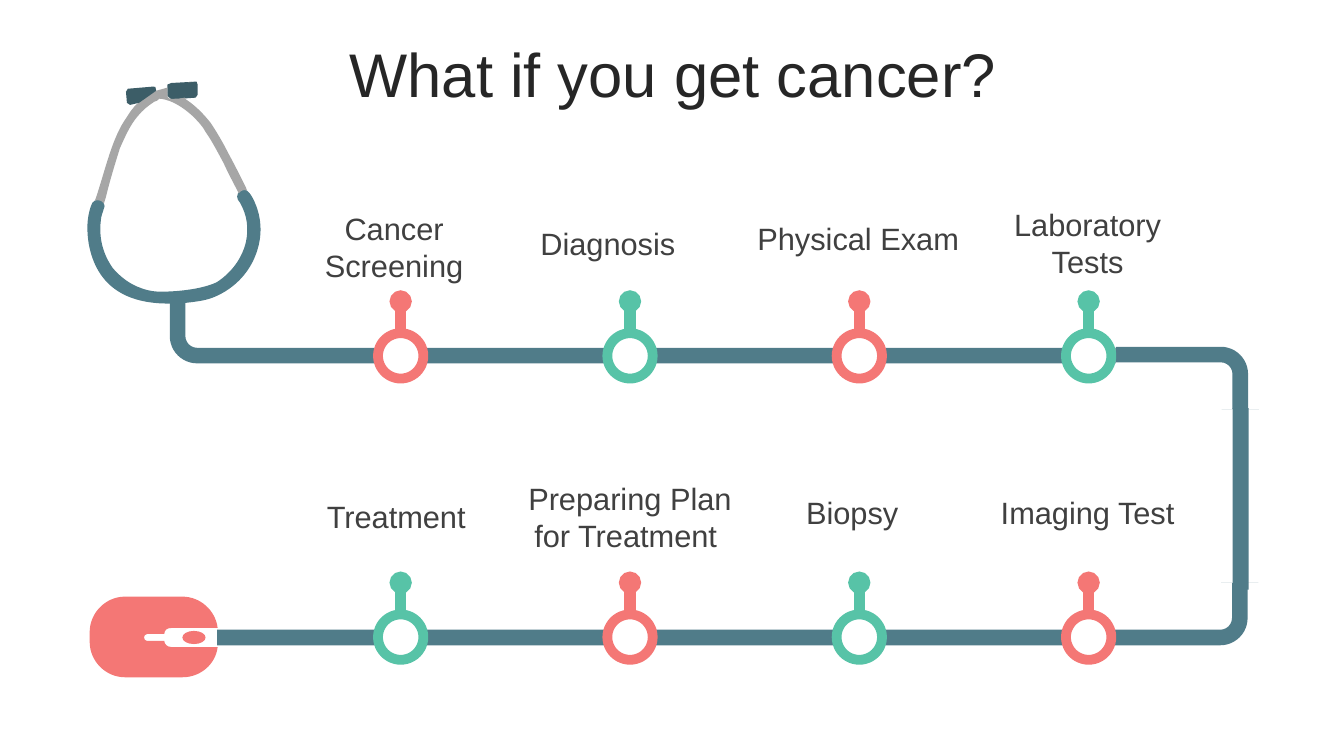
from dataclasses import dataclass

from lxml import etree
from pptx import Presentation
from pptx.dml.color import RGBColor
from pptx.enum import shapes, text
from pptx.oxml import ns
from pptx.util import Pt


@dataclass(frozen=True)
class Theme:
    """Hold the colours, font and type sizes."""
    font: str = "Arial"
    title_size: int = 44
    label_size: int = 22
    title: str = "262626"
    label: str = "404040"
    tube: str = "507C89"
    tip: str = "3C5D67"
    arm: str = "A6A6A6"
    joint: str = "888888"
    coral: str = "F47775"
    mint: str = "57C3A7"
    white: str = "FFFFFF"


THEME = Theme()
FIRST_X, STEP_X = 286.2, 163.8
ROWS = (254.2, 455.1)

STEPS = (
    (0, 0, "Cancer Screening", (198.7, 146.2, 60.5)),
    (0, 1, "Diagnosis", (351.4, 157, 33.8)),
    (0, 2, "Physical Exam", (530.2, 153.4, 33.8)),
    (0, 3, "Laboratory Tests", (694.1, 143.3, 60.5)),
    (1, 0, "Treatment ", (203.3, 352.1, 33.8)),
    (1, 1, "Preparing Plan for Treatment ", (367.2, 339.1, 60.5)),
    (1, 2, "Biopsy", (525.9, 349.2, 33.8)),
    (1, 3, "Imaging Test", (694.1, 348.8, 33.8)),
)

BENDS = (
    (504.7, 66.7, 743.8, 90, True),
    (432.9, -104.4, 683.3, 270, False),
    (825.8, 218.9, 102.2, 90, False),
)

RIGHT_TIP = (
    (119.5, 60.5), (122.4, 59.3), (140.4, 58.3), (141.2, 60.5),
    (141.2, 67.7), (139.7, 69.8), (122.4, 71), (119.5, 68.4),
)
LEFT_TIP = (
    (90, 65.5), (91.4, 63.4), (108.7, 61.9), (111, 62),
    (111.6, 64.8), (99.4, 73.4), (92.9, 74.9), (90.7, 73.4),
)
JOINT = (
    (137.5, 58.5), (136.6, 58.9, 135.5, 58.9, 134.6, 59),
    (134.6, 58.7), (135.5, 58.6, 136.6, 58.5, 137.5, 58.5),
)
YOKE = (
    (174.2, 135.4), (175, 135.4, 175.7, 135.4, 176.4, 136.1),
    (178.6, 137.5, 179.3, 139.7, 180.7, 141.8),
    (187.9, 156.2, 187.9, 171.4, 180.7, 186.5),
    (175, 198, 165.6, 206.6, 154.1, 211.7),
    (147.6, 214.6, 141.1, 215.3, 135.4, 216),
    (129.6, 216.7, 129.6, 216.7, 125.3, 216.7),
    (91.4, 218.2, 69.1, 205.2, 63.4, 174.2),
    (61.9, 164.9, 61.9, 156.2, 64.8, 147.6),
    (65.5, 145.4, 66.2, 144, 67.7, 143.3),
    (71.3, 141.8, 72.7, 142.6, 74.2, 145.4),
    (74.9, 146.9, 74.9, 147.6, 74.2, 149),
    (73.4, 151.9, 72, 154.8, 72, 157.7),
    (70.6, 169.9, 73.4, 181.4, 80.6, 191.5),
    (88.6, 200.9, 98.6, 206.6, 110.2, 208.1),
    (116.6, 208.8, 141.1, 208.1, 154.8, 201.6),
    (164.9, 195.1, 172.8, 185, 175.7, 172.8),
    (177.8, 162.7, 176.4, 153.4, 171.4, 144.7),
    (170.6, 144, 170.6, 143.3, 169.9, 142.6),
    (169.2, 141.1, 169.2, 139.7, 169.9, 138.2),
    (170.6, 137.5, 171.4, 136.1, 172.8, 136.1),
)
RIGHT_ARM = (
    (176.4, 136.1), (173.5, 135.4, 172, 136.1, 170.6, 138.2),
    (167, 131, 163, 123.8, 159.8, 116.6),
    (155.5, 108.7, 151.9, 101.5, 146.9, 94.3),
    (144.7, 90, 141.1, 86.4, 137.5, 82.8),
    (131, 77, 123.8, 72, 115.2, 70.6), (113.8, 70.6),
    (114.5, 69.1, 115.9, 69.1, 117.4, 68.4),
    (118.8, 68.4, 119.5, 67.7, 119.5, 66.2),
    (119.5, 69.8, 120.2, 70.6, 122.4, 70.6),
    (125.3, 70.6, 128.9, 70.6, 131.8, 69.8), (133.2, 71.3),
    (139.7, 75.6, 145.4, 81.4, 150.5, 87.8),
    (154.8, 94.3, 159.1, 101.5, 162.7, 108.7),
    (167, 116.6, 171.4, 125.3, 175.7, 133.9),
)
LEFT_ARM = (
    (119.5, 65.5), (119.5, 68.4, 118.8, 69.1, 117.4, 69.1),
    (115.9, 69.1, 114.5, 69.8, 113.8, 70.6),
    (113, 72, 111.6, 72, 110.2, 72.7),
    (105.8, 75.6, 102.2, 78.5, 98.6, 82.8),
    (92.9, 89.3, 89.3, 97.9, 85.7, 105.8),
    (82.1, 117.4, 78.5, 128.9, 75.6, 141.1), (74.2, 145.4),
    (72.7, 143.3, 70.6, 142.6, 67.7, 143.3), (68.4, 141.8),
    (72, 131, 74.9, 120.2, 78.5, 109.4),
    (81.4, 100.8, 85, 91.4, 90.7, 83.5),
    (92.9, 79.9, 95, 77, 97.9, 74.2),
    (101, 72, 107, 66.5, 111.6, 64.8),
    (114.5, 64.1, 116.6, 63.4, 119.5, 62.6),
)
CHEST_PIECE = (
    (155.5, 448.6), (122.4, 448.6),
    (119.5, 448.6, 117.4, 450, 117.4, 452.9), (105.1, 452.9),
    (102.2, 453.2, 102.2, 457.6, 105.1, 457.9), (117.4, 457.9),
    (117.4, 460.1, 119.5, 462.2, 122.4, 462.2), (155.5, 462.2),
    (154.1, 474.5, 143.3, 483.8, 130.3, 483.8), (89.3, 483.8),
    (75.6, 483.8, 64.1, 472.3, 64.1, 458.6), (64.1, 451.4),
    (64.1, 437.8, 75.6, 426.2, 89.3, 426.2), (130.3, 426.2),
    (143.3, 426.2, 154.1, 436.3, 155.5, 448.6),
)
CHEST_DOT = (
    (146.9, 455.4), (146.9, 458, 143.2, 460.1, 138.6, 460.1),
    (134, 460.1, 130.3, 458, 130.3, 455.4),
    (130.3, 452.8, 134, 450.7, 138.6, 450.7),
    (143.2, 450.7, 146.9, 452.8, 146.9, 455.4),
)


def rgb(colour):
    """Turn a hex string into a colour."""
    return RGBColor.from_string(colour)


def paint(s, fill, line=None, width=0):
    """Set fill and outline, without a shadow."""
    s.shadow.inherit = False
    s.fill.solid()
    s.fill.fore_color.rgb = rgb(fill)
    if line:
        s.line.color.rgb = rgb(line)
        s.line.width = Pt(width)
    else:
        s.line.fill.background()


def add_preset(slide, kind, box, *style):
    """Add a painted preset shape."""
    s = slide.shapes.add_shape(kind, *map(Pt, box))
    paint(s, *style)
    return s


def add_outline(slide, fill, *contours):
    """Add a filled shape whose six-number segments are cubic curves."""
    builder = slide.shapes.build_freeform(*map(Pt, contours[0][0]), scale=1.0)
    for i, (start, *segments) in enumerate(contours):
        if i:
            builder.move_to(*map(Pt, start))
        points = [(Pt(x), Pt(y)) for g in segments for x, y in zip(g[::2], g[1::2])]
        builder.add_line_segments(points, close=True)
    s = builder.convert_to_shape()
    paint(s, fill)
    lines = iter(list(s._element.iter(ns.qn("a:lnTo"))))
    for segment in (g for contour in contours for g in contour[1:]):
        first = next(lines)
        if len(segment) == 6:
            curve = etree.Element(ns.qn("a:cubicBezTo"))
            first.addprevious(curve)
            for line in (first, next(lines), next(lines)):
                curve.append(line[0])
                line.getparent().remove(line)


def add_bend(slide, left, top, length, rotation, flipped):
    """Add a bent piece of the tube."""
    s = add_preset(slide, shapes.MSO_SHAPE.BENT_ARROW, (left, top, 44.6, length), THEME.tube)
    for i, value in enumerate((0.25, 0.298, 0, 0.438)):
        s.adjustments[i] = value
    s.rotation = rotation
    if flipped:
        s._element.spPr.xfrm.set("flipH", "1")


def add_marker(slide, x, y, colour):
    """Add a ring with a round-ended pin."""
    s = slide.shapes.add_connector(shapes.MSO_CONNECTOR.STRAIGHT, Pt(x), Pt(y), Pt(x), Pt(y - 38.9))
    s.line.color.rgb = rgb(colour)
    s.line.width = Pt(8)
    for end in ("a:headEnd", "a:tailEnd"):
        etree.SubElement(s.line._get_or_add_ln(), ns.qn(end), type="oval", w="sm", len="sm")
    etree.SubElement(s._element.spPr, ns.qn("a:effectLst"))
    add_preset(slide, shapes.MSO_SHAPE.OVAL, (x - 16.2, y - 16.2, 32.4, 32.4), THEME.white, colour, 7)


def write(tf, words, size, colour):
    """Write one centred paragraph."""
    tf.word_wrap = True
    p = tf.paragraphs[0]
    p.text = words
    p.alignment = text.PP_ALIGN.CENTER
    p.font.name, p.font.size, p.font.color.rgb = THEME.font, Pt(size), rgb(colour)
    return p


def add_title(slide, words):
    """Place and fill the title."""
    s = slide.shapes.title
    s.left, s.top, s.width, s.height = map(Pt, (25.2, 27.1, 911.5, 56.9))
    p = write(s.text_frame, words, THEME.title_size, THEME.title)
    p.line_spacing = 0.9
    s.text_frame.vertical_anchor = text.MSO_ANCHOR.MIDDLE
    s.text_frame.auto_size = text.MSO_AUTO_SIZE.NONE


def main():
    """Build the slide."""
    prs = Presentation()
    prs.slide_width, prs.slide_height = Pt(960), Pt(540)
    slide = prs.slides.add_slide(prs.slide_layouts[5])
    add_title(slide, "What if you get cancer?")
    for fill, outline in ((THEME.tip, RIGHT_TIP), (THEME.joint, JOINT), (THEME.tube, YOKE),
                          (THEME.arm, RIGHT_ARM), (THEME.arm, LEFT_ARM), (THEME.tip, LEFT_TIP)):
        add_outline(slide, fill, outline)
    for bend in BENDS:
        add_bend(slide, *bend)
    add_preset(slide, shapes.MSO_SHAPE.RECTANGLE, (880.4, 291.6, 11.5, 129.6), THEME.tube)
    for row, column, words, (left, top, height) in STEPS:
        colour = (THEME.coral, THEME.mint)[(row + column) % 2]
        add_marker(slide, FIRST_X + column * STEP_X, ROWS[row], colour)
        s = slide.shapes.add_textbox(Pt(left), Pt(top), Pt(165.6), Pt(height))
        write(s.text_frame, words, THEME.label_size, THEME.label)
    add_outline(slide, THEME.coral, CHEST_PIECE, CHEST_DOT)
    prs.save("out.pptx")


if __name__ == "__main__":
    main()
